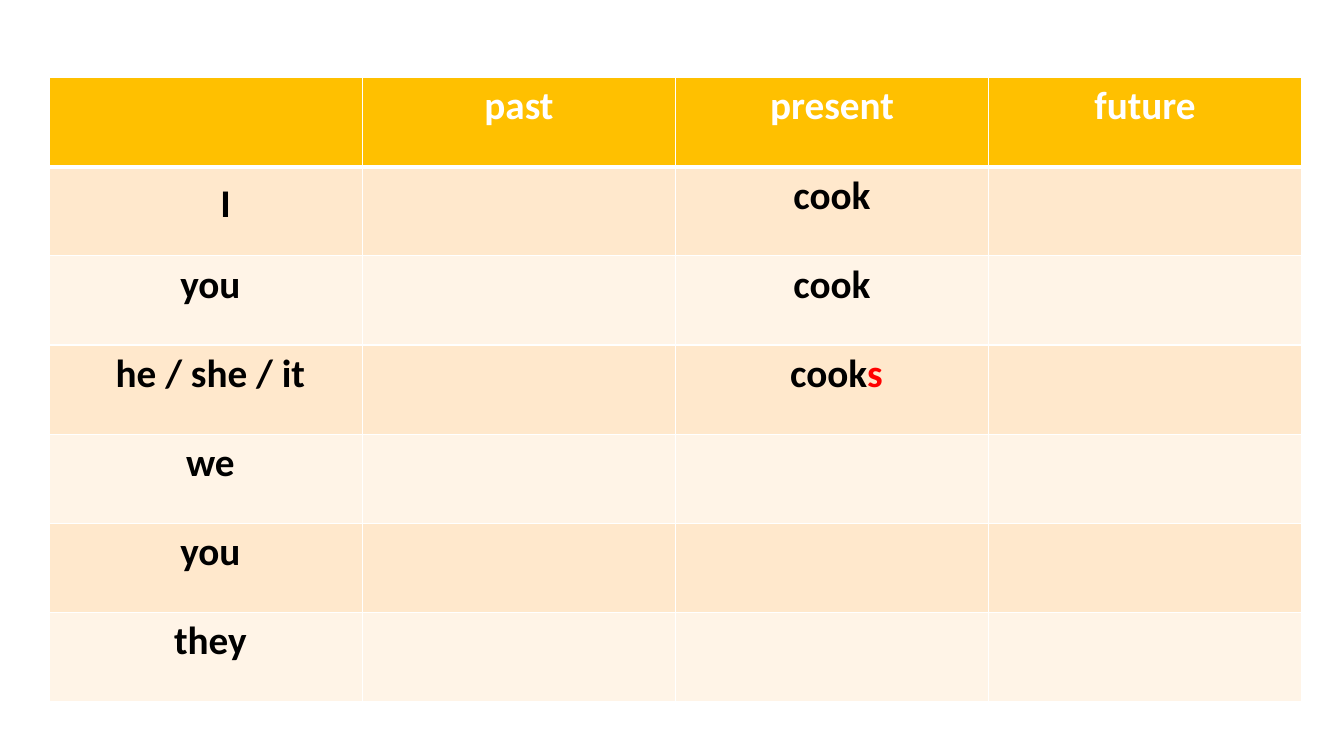
from lxml import etree
from pptx import Presentation
from pptx.dml.color import RGBColor
from pptx.enum.text import PP_ALIGN
from pptx.oxml.ns import qn
from pptx.util import Inches, Pt

CENTER = PP_ALIGN.CENTER
WHITE, BLACK, RED = "FFFFFF", "000000", "FF0000"
HEADER_FILL = "FFC000"
BAND_FILLS = ("FFF4E7", "FFE8CC")

TENSES = ["", "past", "present", "future"]
CONJUGATION = [
    ("　I", "cook", ""),
    (" you", "cook", ""),
    (" he / she / it", " cook", "s"),
    (" we", "", ""),
    (" you", "", ""),
    (" they", "", ""),
]


def color(hex_string):
    return RGBColor.from_string(hex_string)


def add_text(paragraph, text, size=28, font="Calibri", fill=BLACK, bold=True):
    paragraph.alignment = CENTER
    run = paragraph.add_run()
    run.text = text
    run.font.size = Pt(size)
    run.font.name = font
    run.font.bold = bold
    run.font.color.rgb = color(fill)


def add_borders(cell, top, bottom):
    properties = cell._tc.get_or_add_tcPr()
    widths = {"a:lnL": 1, "a:lnR": 1, "a:lnT": top, "a:lnB": bottom}
    for position, (side, width) in enumerate(widths.items()):
        line = etree.Element(qn(side), w=str(Pt(width)))
        solid = etree.SubElement(line, qn("a:solidFill"))
        etree.SubElement(solid, qn("a:srgbClr"), val=WHITE)
        properties.insert(position, line)


def style_cell(cell, row):
    cell.fill.solid()
    cell.fill.fore_color.rgb = color(BAND_FILLS[row % 2] if row else HEADER_FILL)
    add_borders(cell, top=3 if row == 1 else 1, bottom=1 if row else 3)


def add_verb_table(slide, left, top, width, height):
    row_count, column_count = len(CONJUGATION) + 1, len(TENSES)
    verb_table = slide.shapes.add_table(
        row_count, column_count, left, top, width, height).table
    for column in verb_table.columns:
        column.width = width // column_count
    for row in verb_table.rows:
        row.height = height // row_count

    for row in range(row_count):
        for column in range(column_count):
            style_cell(verb_table.cell(row, column), row)

    def write(row, column, text, **text_format):
        if text:
            paragraph = verb_table.cell(row, column).text_frame.paragraphs[0]
            add_text(paragraph, text, **text_format)

    for column, tense in enumerate(TENSES):
        write(0, column, tense, fill=WHITE)
    for row, (pronoun, verb, ending) in enumerate(CONJUGATION, start=1):
        write(row, 0, pronoun)
        write(row, TENSES.index("present"), verb)
        write(row, TENSES.index("present"), ending, fill=RED)


def main():
    presentation = Presentation()
    presentation.slide_width = Inches(13.33)
    presentation.slide_height = Inches(7.5)
    slide = presentation.slides.add_slide(presentation.slide_layouts[6])
    add_verb_table(slide, Inches(0.49), Inches(0.77), Inches(12.42), Inches(6.19))
    presentation.save("out.pptx")


if __name__ == "__main__":
    main()
